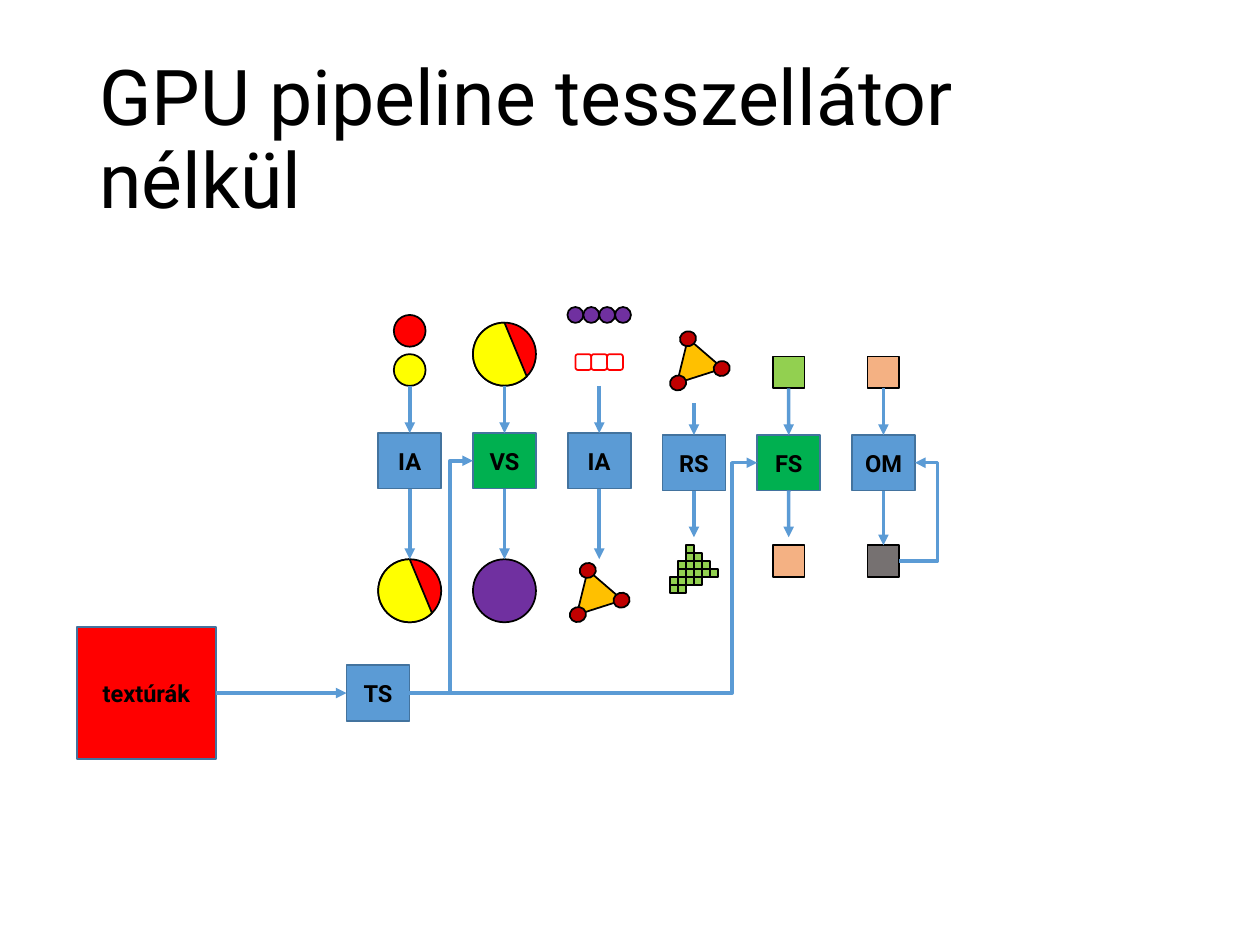
from lxml.etree import SubElement
from pptx import Presentation
from pptx.dml.color import RGBColor
from pptx.enum.shapes import MSO_CONNECTOR, MSO_SHAPE
from pptx.enum.text import MSO_ANCHOR, MSO_AUTO_SIZE, PP_ALIGN
from pptx.oxml.ns import qn
from pptx.util import Cm, Pt

BLACK = RGBColor(0x00, 0x00, 0x00)
WHITE = RGBColor(0xFF, 0xFF, 0xFF)
RED = RGBColor(0xFF, 0x00, 0x00)
DARK_RED = RGBColor(0xC0, 0x00, 0x00)
YELLOW = RGBColor(0xFF, 0xFF, 0x00)
AMBER = RGBColor(0xFF, 0xC0, 0x00)
PEACH = RGBColor(0xF4, 0xB1, 0x83)
LIME = RGBColor(0x92, 0xD0, 0x50)
GREEN = RGBColor(0x00, 0xB0, 0x50)
PURPLE = RGBColor(0x70, 0x30, 0xA0)
GRAY = RGBColor(0x76, 0x71, 0x71)
BLUE = RGBColor(0x5B, 0x9B, 0xD5)
NAVY = RGBColor(0x43, 0x73, 0x9E)

TOP, LEFT, BOTTOM, RIGHT = range(4)
FIRST_X, PITCH = 8.26, 1.91
STAGE_W, STAGE_H = 1.27, 1.12
UPPER_Y, LOWER_Y = 7.51, 11.31   # centres of the squares above and below
ARROW_START, ARROW_END = 7.78, 11.27
SMALL, LARGE, BEAD, PIXEL = 0.64, 1.27, 0.32, 0.16
FRAGMENTS = ((2,), (2, 3), (1, 2, 3, 4), (1, 2, 3, 4, 5), (0, 1, 2, 3), (0, 1))


class PipelineSlide:
    font_name = "Roboto"

    def __init__(self, slide):
        self.slide = slide
        self.shapes = slide.shapes

    def format_font(self, font, size, bold):
        for name, value in {"name": self.font_name, "size": Pt(size), "bold": bold}.items():
            setattr(font, name, value)
        font.color.rgb = BLACK

    def title(self, text, left, top, width, height):
        title = self.shapes.title
        place = {"left": left, "top": top, "width": width, "height": height}
        for name, value in place.items():
            setattr(title, name, Cm(value))
        frame = title.text_frame
        frame.text = text
        layout = {"vertical_anchor": MSO_ANCHOR.MIDDLE, "word_wrap": True,
                  "auto_size": MSO_AUTO_SIZE.NONE}
        for name, value in layout.items():
            setattr(frame, name, value)
        paragraph = frame.paragraphs[0]
        paragraph.alignment = PP_ALIGN.LEFT
        paragraph.line_spacing = 0.9
        self.format_font(paragraph.runs[0].font, 44, False)

    def figure(self, kind, x, y, width, height, fill, line=BLACK, rotation=0):
        """Draw a preset shape centred on (x, y)."""
        shape = self.shapes.add_shape(
            kind, Cm(x - width / 2), Cm(y - height / 2), Cm(width), Cm(height))
        shape.shadow.inherit = False
        shape.fill.solid()
        shape.fill.fore_color.rgb = fill
        shape.line.color.rgb = line
        shape.line.width = Pt(1)
        shape.rotation = rotation
        return shape

    def circle(self, x, y, size, fill):
        return self.figure(MSO_SHAPE.OVAL, x, y, size, size, fill)

    def square(self, x, y, size, fill):
        return self.figure(MSO_SHAPE.RECTANGLE, x, y, size, size, fill)

    def box(self, label, x, y, fill, width=STAGE_W, height=STAGE_H):
        box = self.figure(MSO_SHAPE.RECTANGLE, x, y, width, height, fill, NAVY)
        frame = box.text_frame
        for side in ("left", "right", "top", "bottom"):
            setattr(frame, f"margin_{side}", 0)
        frame.vertical_anchor = MSO_ANCHOR.MIDDLE
        frame.text = label
        paragraph = frame.paragraphs[0]
        paragraph.alignment = PP_ALIGN.CENTER
        self.format_font(paragraph.runs[0].font, 13.5, True)
        return box

    def vertex(self, x, y):
        """Two attributes packed into one round vertex."""
        self.circle(x, y, LARGE, RED)
        self.figure(MSO_SHAPE.CHORD, x, y, LARGE, LARGE, YELLOW)

    def triangle(self, x, y):
        tilt = -17.7
        self.figure(MSO_SHAPE.ISOSCELES_TRIANGLE, x, y, 0.97, 0.79, AMBER, rotation=tilt)
        for dx, dy in ((-0.12, -0.37), (-0.32, 0.52), (0.56, 0.23)):
            self.figure(MSO_SHAPE.OVAL, x + dx, y + dy, 0.33, 0.3, DARK_RED, rotation=tilt)

    def connector(self, kind, start, end):
        connector = self.shapes.add_connector(kind, *(Cm(v) for v in (*start, *end)))
        connector.line.color.rgb = BLUE
        connector.line.width = Pt(2)
        SubElement(connector.line._get_or_add_ln(), qn("a:tailEnd"), type="triangle")
        SubElement(connector._element.spPr, qn("a:effectLst"))
        return connector

    def arrow(self, start, end, source=None, target=None):
        """Straight arrow; source and target are (box, side) pairs to join."""
        arrow = self.connector(MSO_CONNECTOR.STRAIGHT, start, end)
        if source:
            arrow.begin_connect(*source)
        if target:
            arrow.end_connect(*target)

    def elbow(self, start, end, bend_x):
        elbow = self.connector(MSO_CONNECTOR.ELBOW, start, end)
        share = round((bend_x - start[0]) / (end[0] - start[0]) * 100000)
        guides = elbow._element.spPr.find(qn("a:prstGeom")).get_or_add_avLst()
        SubElement(guides, qn("a:gd"), name="adj1", fmla=f"val {share}")


def main():
    prs = Presentation()
    prs.slide_width, prs.slide_height = Cm(25.4), Cm(19.05)
    page = PipelineSlide(prs.slides.add_slide(prs.slide_layouts[5]))
    page.title("GPU pipeline tesszellátor nélkül", 1.75, 1.02, 21.9, 3.68)

    columns = [FIRST_X + i * PITCH for i in range(6)]
    input_x, vertex_x, assembly_x, raster_x, fragment_x, output_x = columns

    # Data entering and leaving each stage
    page.circle(input_x, 6.67, SMALL, RED)
    page.circle(input_x, 7.46, SMALL, YELLOW)
    page.vertex(input_x, 11.91)
    page.vertex(vertex_x, 7.14)
    page.circle(vertex_x, 11.91, LARGE, PURPLE)
    for i in range(4):
        page.circle(assembly_x + (i - 1.5) * BEAD, 6.35, BEAD, PURPLE)
    for i in range(3):
        page.figure(MSO_SHAPE.ROUNDED_RECTANGLE, assembly_x + (i - 1) * BEAD, 7.3,
                    BEAD, BEAD, WHITE, RED)
    page.triangle(assembly_x - 0.11, 11.87)
    page.triangle(raster_x, 7.2)
    for row, cells in enumerate(FRAGMENTS):
        for column in cells:
            page.square(raster_x - 0.4 + column * PIXEL, 11.07 + row * PIXEL, PIXEL, LIME)
    fragment = page.square(fragment_x, UPPER_Y, SMALL, LIME)
    page.square(fragment_x, LOWER_Y, SMALL, PEACH)
    color = page.square(output_x, UPPER_Y, SMALL, PEACH)
    frame_buffer = page.square(output_x, LOWER_Y, SMALL, GRAY)

    # Stages: label, fill, centre y, arrow start and end, joined squares
    stages = (
        ("IA", BLUE, 9.29, ARROW_START, ARROW_END, None, None),
        ("VS", GREEN, 9.29, ARROW_START, ARROW_END, None, None),
        ("IA", BLUE, 9.29, ARROW_START, ARROW_END, None, None),
        ("RS", BLUE, 9.33, 8.13, 10.83, None, None),
        ("FS", GREEN, 9.33, 7.83, 10.83, (fragment, BOTTOM), None),
        ("OM", BLUE, 9.33, 7.83, 10.99, (color, BOTTOM), (frame_buffer, TOP)),
    )
    for x, (label, fill, y, start, end, source, target) in zip(columns, stages):
        stage = page.box(label, x, y, fill)
        page.arrow((x, start), (x, y - STAGE_H / 2), source, (stage, TOP))
        page.arrow((x, y + STAGE_H / 2), (x, end), (stage, BOTTOM), target)

    # Texture sampling and the frame buffer loop
    sampler_x, sampler_y = 7.62, 13.97
    textures = page.box("textúrák", 2.95, sampler_y, RED, 2.8, 2.67)
    sampler = page.box("TS", sampler_x, sampler_y, BLUE)
    page.arrow((4.35, sampler_y), (6.99, sampler_y), (textures, RIGHT), (sampler, LEFT))
    half = STAGE_W / 2
    sampler_exit = (sampler_x + half, sampler_y)
    page.elbow(sampler_exit, (vertex_x - half, 9.29), 9.07)
    page.elbow(sampler_exit, (fragment_x - half, 9.33), 14.76)
    page.elbow((output_x + SMALL / 2, LOWER_Y), (output_x + half, 9.33), 18.9)

    prs.save("out.pptx")


if __name__ == "__main__":
    main()
